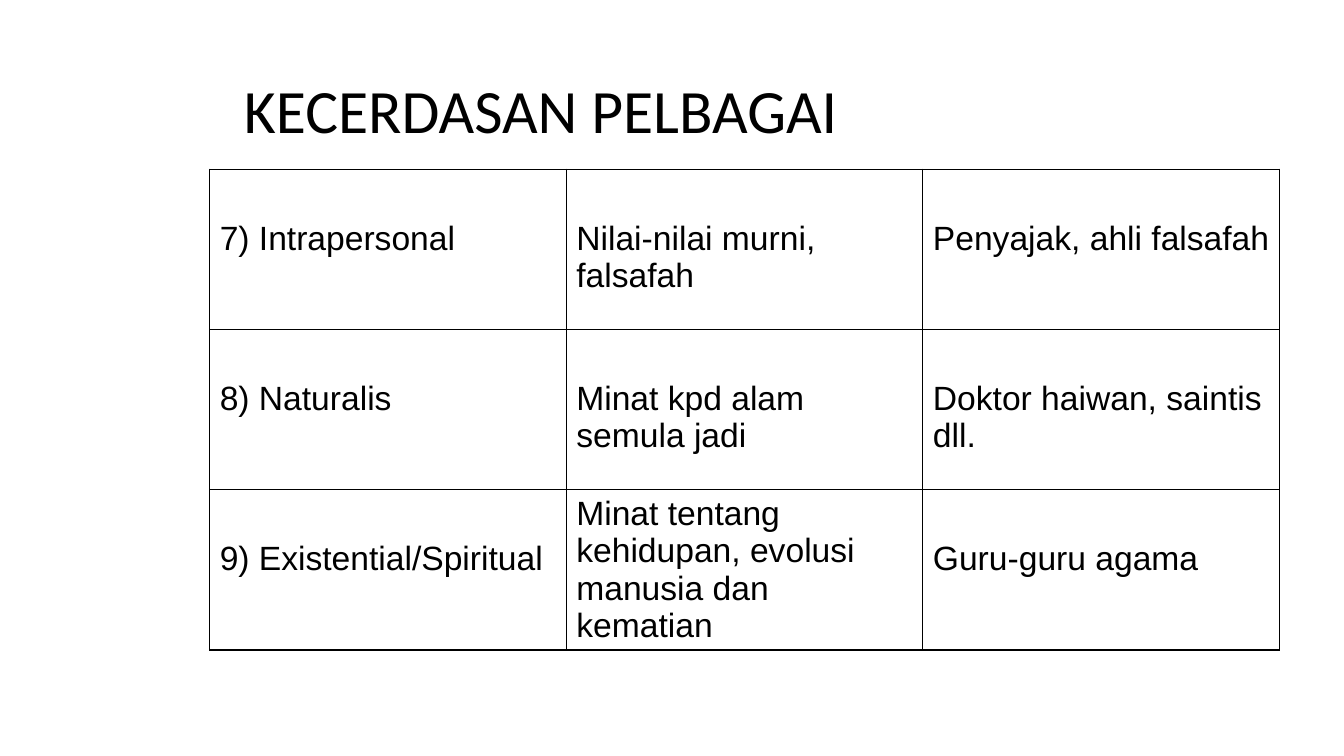
from dataclasses import dataclass

from lxml.etree import SubElement
from pptx import Presentation
from pptx.dml.color import RGBColor
from pptx.enum.text import MSO_ANCHOR as Anchor, MSO_AUTO_SIZE as AutoSize, PP_ALIGN as Align
from pptx.oxml.ns import qn
from pptx.slide import Slide
from pptx.table import _Cell as Cell
from pptx.text.text import TextFrame
from pptx.util import Inches, Pt

WIDTH, HEIGHT = Inches(13.33), Inches(7.5)
BLACK = "000000"
LINE_DROP = Inches(0.5)
FULL_CELL_MARGIN = Inches(0.05)


@dataclass(frozen=True)
class Area:
    left: float
    top: float
    width: float
    height: float

    def box(self) -> tuple[int, int, int, int]:
        return (
            round(self.left * WIDTH),
            round(self.top * HEIGHT),
            round(self.width * WIDTH),
            round(self.height * HEIGHT),
        )


@dataclass(frozen=True)
class Intelligence:
    label: str
    interest: str
    careers: str
    interest_margin: int = LINE_DROP

    def entries(self) -> list[tuple[str, int]]:
        return [
            (self.label, LINE_DROP),
            (self.interest, self.interest_margin),
            (self.careers, LINE_DROP),
        ]


HEADING_AREA = Area(0.174, 0.0533, 0.7577, 0.1933)
GRID_AREA = Area(0.156, 0.224, 0.796, 0.636)
INTELLIGENCES = [
    Intelligence("7) Intrapersonal", "Nilai-nilai murni, falsafah", "Penyajak, ahli falsafah"),
    Intelligence("8) Naturalis", "Minat kpd alam semula jadi", "Doktor haiwan, saintis dll."),
    Intelligence(
        "9) Existential/Spiritual",
        "Minat tentang kehidupan, evolusi manusia dan kematian",
        "Guru-guru agama",
        FULL_CELL_MARGIN,
    ),
]


def colour(value: str) -> RGBColor:
    return RGBColor.from_string(value)


def write(frame: TextFrame, text: str, *, font: str, size: float, spacing: float = 1.0) -> None:
    frame.text = text
    frame.word_wrap = True
    paragraph = frame.paragraphs[0]
    paragraph.alignment = Align.LEFT
    paragraph.line_spacing = spacing
    run_font = paragraph.runs[0].font
    run_font.name = font
    run_font.size = Pt(size)
    run_font.bold = False
    run_font.color.rgb = colour(BLACK)


def add_borders(cell: Cell, ink: str, points: float) -> None:
    properties = cell._tc.get_or_add_tcPr()
    for side in ("a:lnL", "a:lnR", "a:lnT", "a:lnB"):
        edge = SubElement(properties, qn(side), w=str(Pt(points)))
        solid = SubElement(edge, qn("a:solidFill"))
        SubElement(solid, qn("a:srgbClr"), val=ink)


def add_heading(slide: Slide, text: str) -> None:
    heading = slide.shapes.title
    heading.left, heading.top, heading.width, heading.height = HEADING_AREA.box()
    write(heading.text_frame, text, font="Calibri", size=44, spacing=0.9)
    heading.text_frame.auto_size = AutoSize.NONE
    heading.text_frame.vertical_anchor = Anchor.MIDDLE


def add_intelligences(slide: Slide, intelligences: list[Intelligence]) -> None:
    grid = slide.shapes.add_table(len(intelligences), 3, *GRID_AREA.box()).table
    grid.first_row = False
    grid.horz_banding = False
    for row, intelligence in enumerate(intelligences):
        for column, (text, margin) in enumerate(intelligence.entries()):
            cell = grid.cell(row, column)
            write(cell.text_frame, text, font="Arial", size=24)
            cell.margin_top = margin
            cell.vertical_anchor = Anchor.TOP
            add_borders(cell, BLACK, 1)
            cell.fill.background()


def main() -> None:
    deck = Presentation()
    deck.slide_width, deck.slide_height = WIDTH, HEIGHT
    title_only = deck.slide_layouts.get_by_name("Title Only")
    slide = deck.slides.add_slide(title_only)
    add_heading(slide, "KECERDASAN PELBAGAI")
    add_intelligences(slide, INTELLIGENCES)
    deck.save("out.pptx")


if __name__ == "__main__":
    main()
